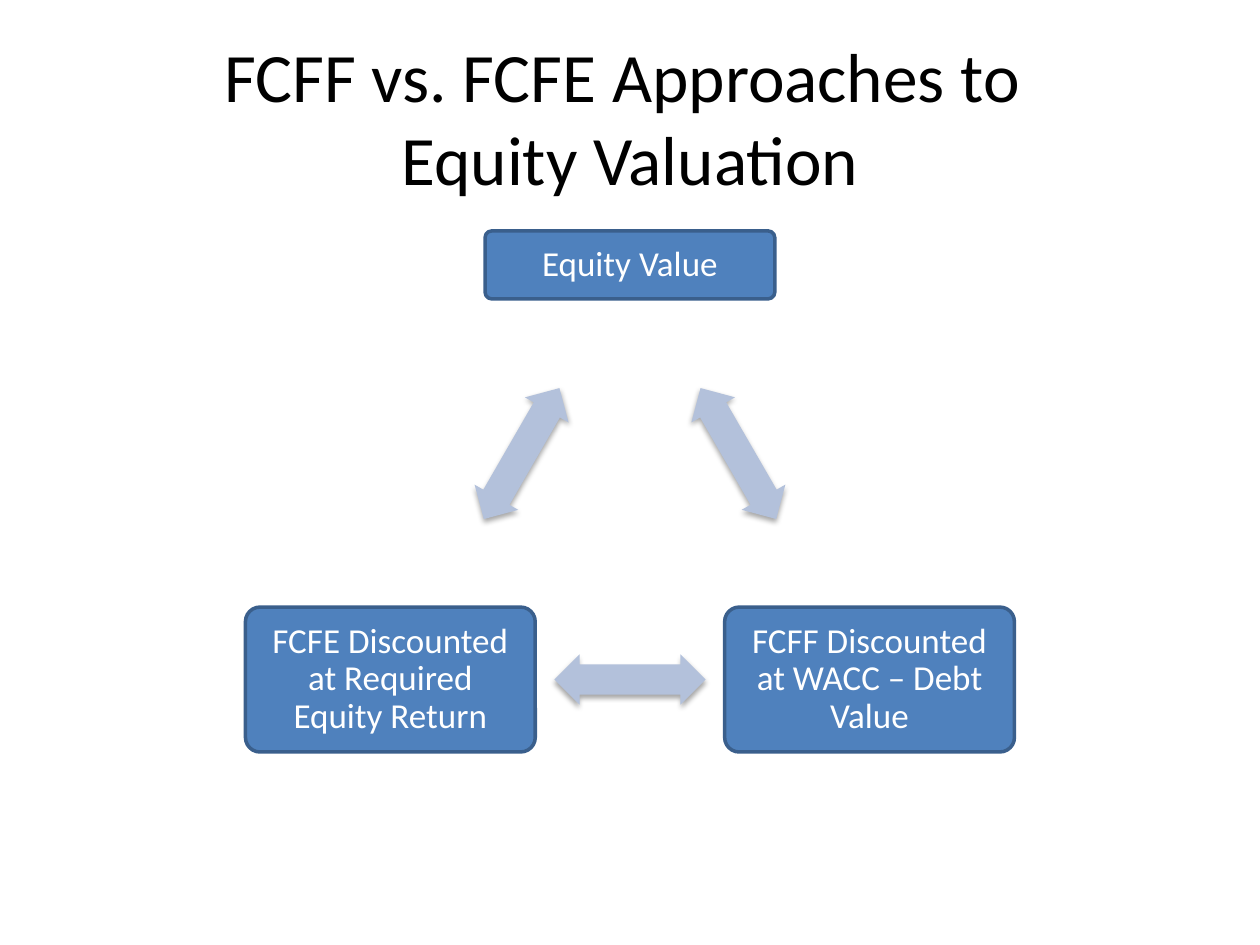
from dataclasses import dataclass

from lxml.etree import SubElement
from pptx import Presentation
from pptx.dml.color import RGBColor
from pptx.enum.shapes import MSO_SHAPE as SHAPE
from pptx.enum.text import MSO_ANCHOR as ANCHOR, MSO_AUTO_SIZE as AUTO_SIZE, PP_ALIGN as ALIGN
from pptx.oxml.ns import qn
from pptx.util import Pt

FONT = "Calibri"
BLACK = RGBColor(0x00, 0x00, 0x00)
WHITE = RGBColor(0xFF, 0xFF, 0xFF)
BOX_FILL = RGBColor(0x4F, 0x81, 0xBD)
BOX_LINE = RGBColor(0x3A, 0x5F, 0x8C)
ARROW_FILL = RGBColor(0xB3, 0xC1, 0xDB)

# Triangle of boxes, in points
CENTER_X = 360
BOX_W, BOX_H, TOP_BOX_H = 165.6, 82.8, 38.9
ARROW_W, ARROW_H = 86.4, 28.8
TOP_Y, MIDDLE_Y, BASE_Y = 151.4, 259.2, 388.3
BASE_DX, SIDE_DX = 136.9, 61.9


@dataclass(frozen=True)
class Box:
    text: str
    x: float  # centre
    y: float
    height: float = BOX_H


@dataclass(frozen=True)
class Arrow:
    x: float  # centre
    y: float
    rotation: float


BOXES = [
    Box("Equity Value", CENTER_X, TOP_Y, TOP_BOX_H),
    Box("FCFF Discounted at WACC – Debt Value", CENTER_X + BASE_DX, BASE_Y),
    Box("FCFE Discounted at Required Equity Return", CENTER_X - BASE_DX, BASE_Y),
]
ARROWS = [
    Arrow(CENTER_X + SIDE_DX, MIDDLE_Y, 60),
    Arrow(CENTER_X, BASE_Y, 180),
    Arrow(CENTER_X - SIDE_DX, MIDDLE_Y, 300),
]


def format_text(tf, size: float, color: RGBColor) -> None:
    tf.vertical_anchor = ANCHOR.MIDDLE
    tf.auto_size = AUTO_SIZE.NONE
    tf.word_wrap = True
    for p in tf.paragraphs:
        p.alignment = ALIGN.CENTER
        for r in p.runs:
            r.font.name, r.font.size = FONT, Pt(size)
            r.font.color.rgb = color


def add_centered(s, kind, x: float, y: float, w: float, h: float, fill: RGBColor):
    sp = s.shapes.add_shape(kind, Pt(x - w / 2), Pt(y - h / 2), Pt(w), Pt(h))
    sp.fill.solid()
    sp.fill.fore_color.rgb = fill
    sp.shadow.inherit = False
    return sp


def add_box(s, box: Box) -> None:
    sp = add_centered(s, SHAPE.ROUNDED_RECTANGLE, box.x, box.y, BOX_W, box.height, BOX_FILL)
    sp.adjustments[0] = 0.1
    sp.line.color.rgb = BOX_LINE
    sp.line.width = Pt(2)
    tf = sp.text_frame
    tf.margin_left = tf.margin_right = tf.margin_top = tf.margin_bottom = Pt(6)
    tf.text = box.text
    tf.paragraphs[0].line_spacing = 0.9
    format_text(tf, 20, WHITE)


def add_shadow(sp) -> None:
    effects = sp._element.spPr.find(qn("a:effectLst"))
    shadow = SubElement(effects, qn("a:outerShdw"), blurRad=str(Pt(3.1)), dist=str(Pt(1.8)),
                        dir="5400000", rotWithShape="0")
    color = SubElement(shadow, qn("a:srgbClr"), val=str(BLACK))
    SubElement(color, qn("a:alpha"), val="35000")


def add_arrow(s, arrow: Arrow) -> None:
    sp = add_centered(s, SHAPE.LEFT_RIGHT_ARROW, arrow.x, arrow.y, ARROW_W, ARROW_H, ARROW_FILL)
    sp.adjustments[0], sp.adjustments[1] = 0.6, 0.5
    sp.rotation = arrow.rotation
    sp.line.fill.background()
    add_shadow(sp)


def main() -> None:
    prs = Presentation()
    prs.slide_width, prs.slide_height = Pt(720), Pt(540)
    s = prs.slides.add_slide(prs.slide_layouts[5])

    # Title
    title = s.shapes.title
    title.left, title.top, title.width, title.height = Pt(36), Pt(21.6), Pt(648), Pt(90)
    title.text_frame.text = "FCFF vs. FCFE Approaches to \vEquity Valuation"
    format_text(title.text_frame, 39.6, BLACK)

    # Cycle: each box is followed by the arrow to the next one
    for box, arrow in zip(BOXES, ARROWS):
        add_box(s, box)
        add_arrow(s, arrow)

    prs.save("out.pptx")


if __name__ == "__main__":
    main()
